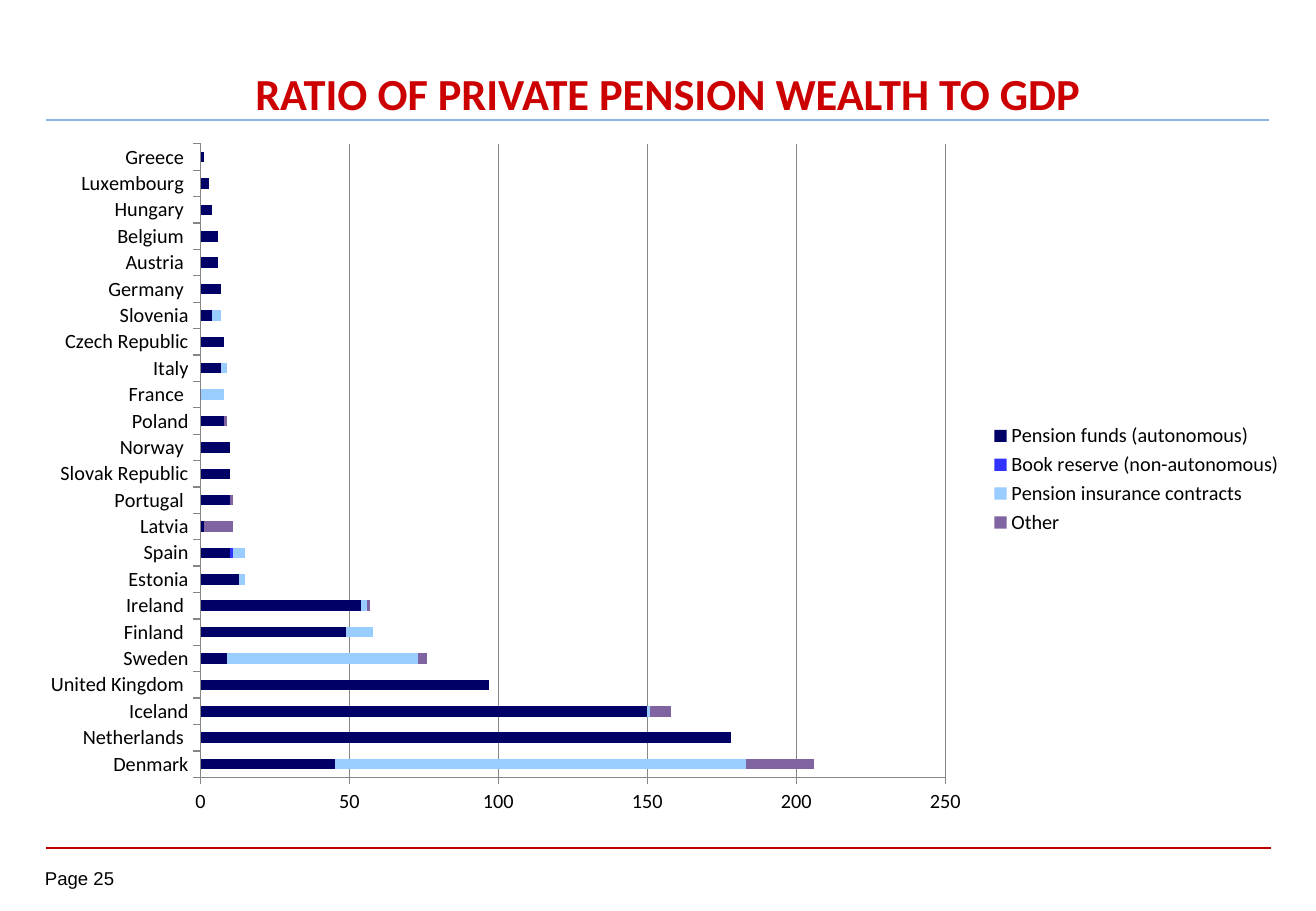
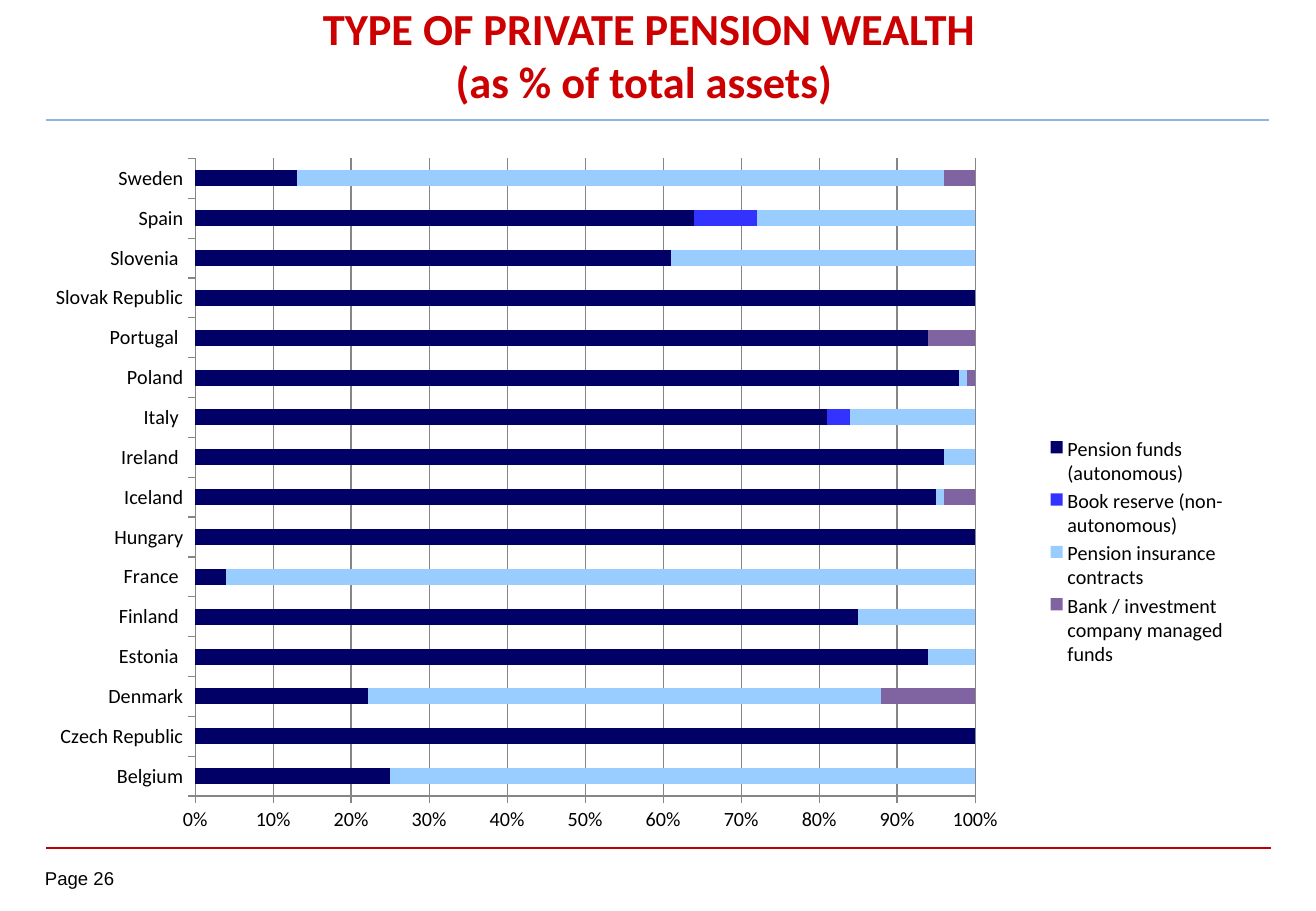
from dataclasses import dataclass

from pptx import Presentation
from pptx.chart.data import CategoryChartData
from pptx.dml.color import RGBColor
from pptx.enum.chart import XL_CHART_TYPE, XL_LEGEND_POSITION, XL_TICK_MARK
from pptx.enum.shapes import MSO_CONNECTOR
from pptx.enum.text import MSO_ANCHOR, PP_ALIGN
from pptx.oxml import parse_xml
from pptx.oxml.ns import nsdecls, qn
from pptx.util import Inches, Pt


@dataclass(frozen=True)
class Theme:
    title_red: str = "CC0000"
    footer_red: str = "C00000"
    header_blue: str = "8EB4E3"
    axis_grey: str = "868686"
    ink: str = "000000"
    series: tuple = ("000066", "3333FF", "99CCFF", "8064A2")
    title_font: str = "Calibri"
    footer_font: str = "Arial"
    title_size: float = 26.3
    chart_size: float = 12
    footer_size: float = 11


THEME = Theme()

WEALTH_TYPES = (
    "Pension funds (autonomous)",
    "Book reserve (non-autonomous)",
    "Pension insurance contracts",
)

GDP_RATIOS = (
    ("Denmark", 45, None, 138, 23),
    ("Netherlands ", 178, None, None, None),
    ("Iceland", 150, None, 1, 7),
    ("United Kingdom ", 97, None, None, None),
    ("Sweden", 9, None, 64, 3),
    ("Finland ", 49, None, 9, None),
    ("Ireland ", 54, None, 2, 1),
    ("Estonia", 13, None, 2, None),
    ("Spain", 10, 1, 4, None),
    ("Latvia", 1, None, None, 10),
    ("Portugal ", 10, None, None, 1),
    ("Slovak Republic", 10, None, None, None),
    ("Norway ", 10, None, None, None),
    ("Poland", 8, None, 0, 1),
    ("France ", 0, None, 8, None),
    ("Italy", 7, 0, 2, None),
    ("Czech Republic", 8, None, None, None),
    ("Slovenia", 4, None, 3, None),
    ("Germany ", 7, None, None, None),
    ("Austria ", 6, None, 0, None),
    ("Belgium ", 6, None, None, None),
    ("Hungary ", 4, None, None, None),
    ("Luxembourg ", 3, None, None, None),
    ("Greece ", 1, None, None, None),
)

ASSET_SHARES = (
    ("Belgium", 25, 0, 75, 0),
    ("Czech Republic", 100, 0, 0, 0),
    ("Denmark", 22, 0, 65, 12),
    ("Estonia ", 94, 0, 6, 0),
    ("Finland ", 85, 0, 15, 0),
    ("France ", 4, 0, 96, 0),
    ("Hungary", 100, 0, 0, 0),
    ("Iceland", 94, 0, 1, 4),
    ("Ireland ", 96, 0, 4, 0),
    ("Italy ", 81, 3, 16, 0),
    ("Poland", 98, 0, 1, 1),
    ("Portugal ", 94, 0, 0, 6),
    ("Slovak Republic", 100, 0, 0, 0),
    ("Slovenia ", 61, 0, 39, 0),
    ("Spain", 64, 8, 28, 0),
    ("Sweden", 13, 0, 83, 4),
)


def style_font(font, name, size, color, bold=False):
    font.name = name
    font.size = Pt(size)
    font.bold = bold
    font.color.rgb = RGBColor.from_string(color)


def add_rule(slide, left, right, top, color, width):
    rule = slide.shapes.add_connector(
        MSO_CONNECTOR.STRAIGHT, Inches(left), Inches(top), Inches(right), Inches(top))
    rule.line.color.rgb = RGBColor.from_string(color)
    rule.line.width = Pt(width)
    rule._element.spPr.append(parse_xml(f"<a:effectLst {nsdecls('a')}/>"))


def add_frame(slide, page):
    add_rule(slide, 0.38, 10.46, 6.98, THEME.footer_red, 1)
    add_rule(slide, 0.38, 10.44, 0.99, THEME.header_blue, 1.5)
    footer = slide.shapes.add_textbox(*map(Inches, (0.37, 7.14, 0.73, 0.22))).text_frame
    footer.margin_left = footer.margin_right = 0
    footer.margin_top = footer.margin_bottom = 0
    run = footer.paragraphs[0].add_run()
    run.text = f"Page {page}"
    style_font(run.font, THEME.footer_font, THEME.footer_size, THEME.ink)


def add_title(slide, box, lines, line_spacing=None):
    title = slide.shapes.add_textbox(*map(Inches, box)).text_frame
    title.word_wrap = True
    title.vertical_anchor = MSO_ANCHOR.MIDDLE
    paragraph = title.paragraphs[0]
    paragraph.alignment = PP_ALIGN.CENTER
    if line_spacing:
        paragraph.line_spacing = Pt(line_spacing)
    for index, line in enumerate(lines):
        if index:
            paragraph.add_line_break()
        run = paragraph.add_run()
        run.text = line
        style_font(run.font, THEME.title_font, THEME.title_size, THEME.title_red, True)


def set_layout(parent, index, area, inner=False):
    for old in parent.findall(qn("c:layout")):
        parent.remove(old)
    target = '<c:layoutTarget val="inner"/>' if inner else ""
    modes = "".join(f'<c:{side}Mode val="edge"/>' for side in "xy")
    sizes = "".join(f'<c:{key} val="{value}"/>' for key, value in zip("xywh", area))
    parent.insert(index, parse_xml(
        f"<c:layout {nsdecls('c')}><c:manualLayout>{target}{modes}{sizes}"
        "</c:manualLayout></c:layout>"))


def style_axis(axis):
    axis.major_tick_mark = XL_TICK_MARK.OUTSIDE
    axis.minor_tick_mark = XL_TICK_MARK.NONE
    axis.format.line.color.rgb = RGBColor.from_string(THEME.axis_grey)
    axis.format.line.width = Pt(0.75)
    style_font(axis.tick_labels.font, THEME.title_font, THEME.chart_size, THEME.ink)


def add_stacked_bars(slide, box, kind, rows, other, axis_format, plot_area, legend_area=None):
    countries, *columns = zip(*rows)
    data = CategoryChartData()
    data.categories = countries
    for wealth_type, values in zip((*WEALTH_TYPES, other), columns):
        data.add_series(wealth_type, values)
    chart = slide.shapes.add_chart(kind, *map(Inches, box), data).chart
    chart.has_title = False
    style_font(chart.font, THEME.title_font, THEME.chart_size, THEME.ink)

    bars = chart.plots[0]
    bars.gap_width = 150
    bars.overlap = 100
    bars.vary_by_categories = False
    for series, color in zip(bars.series, THEME.series):
        series.invert_if_negative = False
        series.format.fill.solid()
        series.format.fill.fore_color.rgb = RGBColor.from_string(color)

    style_axis(chart.category_axis)
    values_axis = chart.value_axis
    style_axis(values_axis)
    values_axis.has_major_gridlines = True
    gridline = values_axis.major_gridlines.format.line
    gridline.color.rgb = RGBColor.from_string(THEME.axis_grey)
    gridline.width = Pt(0.75)
    values_axis.tick_labels.number_format = axis_format
    values_axis.tick_labels.number_format_is_linked = False

    chart.has_legend = True
    legend = chart.legend
    legend.position = XL_LEGEND_POSITION.RIGHT
    legend.include_in_layout = False
    style_font(legend.font, THEME.title_font, THEME.chart_size, THEME.ink)
    set_layout(chart.element.xpath("c:chart/c:plotArea")[0], 0, plot_area, inner=True)
    if legend_area:
        set_layout(chart.element.xpath("c:chart/c:legend")[0], 1, legend_area)
    return chart


def build_gdp_slide(slide):
    add_frame(slide, 25)
    add_title(slide, (0.53, 0.29, 10.01, 0.6),
              ["RATIO OF PRIVATE PENSION WEALTH TO GDP "], line_spacing=57)
    chart = add_stacked_bars(
        slide, (0.22, 1.07, 10.44, 5.75), XL_CHART_TYPE.BAR_STACKED, GDP_RATIOS,
        "Other", "0", (0.137, 0.02, 0.587, 0.907))
    chart.value_axis.minimum_scale = 0
    chart.value_axis.maximum_scale = 250
    chart.value_axis.major_unit = 50


def build_asset_slide(slide):
    add_frame(slide, 26)
    add_title(slide, (0.38, 0.09, 9.92, 0.71),
              ["TYPE OF PRIVATE PENSION WEALTH", "(as % of total assets) "])
    add_stacked_bars(
        slide, (0.46, 1.15, 9.77, 5.75), XL_CHART_TYPE.BAR_STACKED_100, ASSET_SHARES,
        "Bank / investment company managed funds", "0%",
        (0.112, 0.027, 0.661, 0.913), (0.83, 0.42, 0.16, 0.34))


def main():
    deck = Presentation()
    deck.slide_width = Inches(10.83)
    deck.slide_height = Inches(7.5)
    for build in (build_gdp_slide, build_asset_slide):
        build(deck.slides.add_slide(deck.slide_layouts[6]))
    deck.save("out.pptx")


if __name__ == "__main__":
    main()
